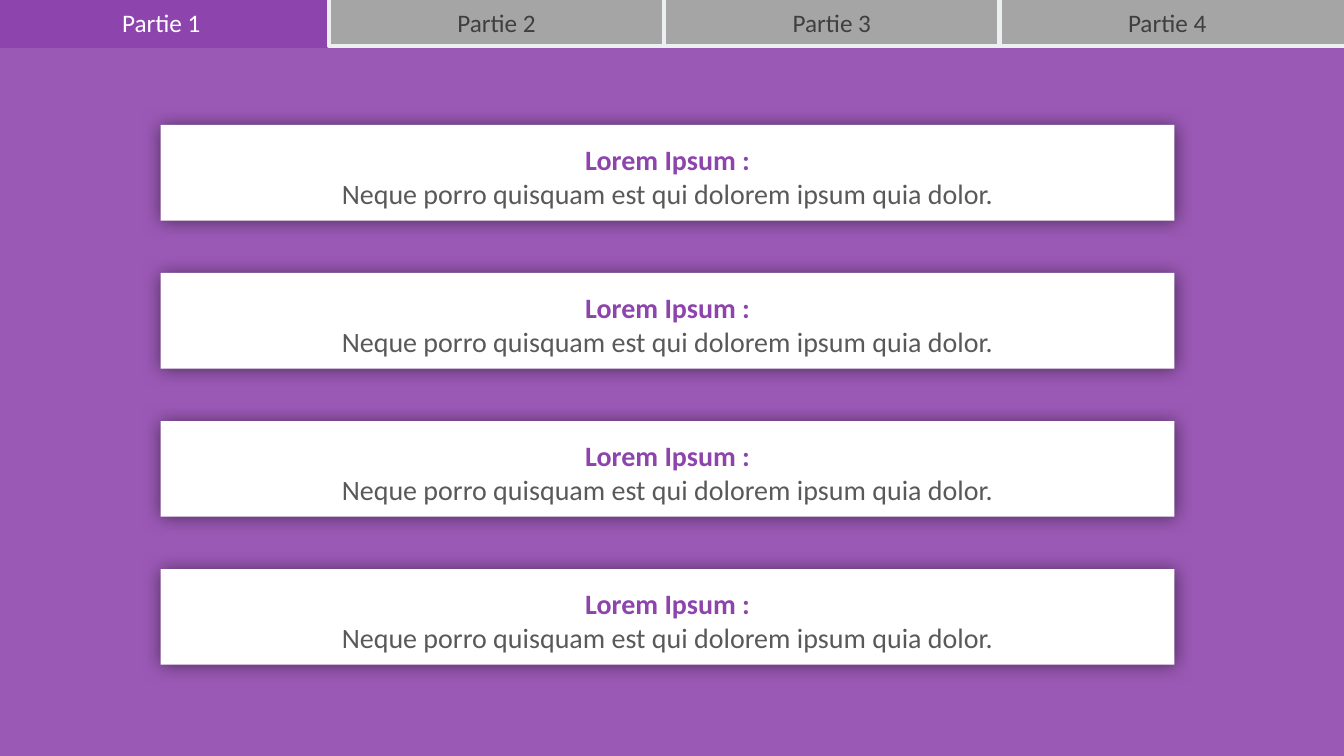
from lxml.etree import SubElement
from pptx import Presentation
from pptx.dml.color import RGBColor
from pptx.enum.shapes import MSO_SHAPE
from pptx.enum.text import MSO_ANCHOR, PP_ALIGN
from pptx.oxml.ns import qn
from pptx.util import Cm, Pt

FONT = "Calibri"
BACKGROUND = RGBColor(0x9B, 0x59, 0xB6)
PURPLE = RGBColor(0x8E, 0x44, 0xAD)
TAB_GREY = RGBColor(0xA5, 0xA5, 0xA5)
TAB_BORDER = RGBColor(0xEC, 0xF0, 0xF1)
TAB_TEXT = RGBColor(0x3F, 0x3F, 0x3F)
BODY_TEXT = RGBColor(0x59, 0x59, 0x59)
WHITE = RGBColor(0xFF, 0xFF, 0xFF)

PARTS = ["Partie 1", "Partie 2", "Partie 3", "Partie 4"]
CARDS = [("Lorem Ipsum :",
          "Neque porro quisquam est qui dolorem ipsum quia dolor.")] * 4


def style(paragraph, text, size, color, bold=False):
    paragraph.text = text
    paragraph.alignment = PP_ALIGN.CENTER
    font = paragraph.font
    font.name, font.size, font.bold = FONT, Pt(size), bold
    font.color.rgb = color


def add_glow_shadow(shape):
    """Soft black shadow spreading evenly around the shape."""
    shape.shadow.inherit = False
    effects = shape._element.spPr.find(qn("a:effectLst"))
    shadow = SubElement(effects, qn("a:outerShdw"), blurRad=str(Pt(13)),
                        dist="0", dir="0", algn="ctr", rotWithShape="0")
    black = SubElement(shadow, qn("a:srgbClr"), val="000000")
    SubElement(black, qn("a:alpha"), val="49000")


def add_card(slide, left, top, width, height, heading, body):
    card = slide.shapes.add_shape(MSO_SHAPE.RECTANGLE, left, top, width, height)
    card.fill.solid()
    card.fill.fore_color.rgb = WHITE
    card.line.fill.background()
    add_glow_shadow(card)

    frame = card.text_frame
    frame.word_wrap = True
    frame.vertical_anchor = MSO_ANCHOR.MIDDLE
    style(frame.paragraphs[0], heading, 20, PURPLE, bold=True)
    frame.paragraphs[0].line_spacing = 1.2
    style(frame.add_paragraph(), body, 20, BODY_TEXT)


def add_cards(slide, left, top, width, height):
    """Cards of equal height, spread evenly over the box."""
    card_height = Cm(2.41)
    pitch = (height - card_height) // (len(CARDS) - 1)
    for row, (heading, body) in enumerate(CARDS):
        add_card(slide, left, top + row * pitch, width, card_height, heading, body)


def add_tab_bar(slide, left, top, width, height, active=0):
    """Navigation tabs; the last one runs a little past the slide edge."""
    bar = slide.shapes.add_group_shape()
    overrun = Cm(0.36)
    pitch = (width - overrun) // len(PARTS)

    # Tab backgrounds
    for column in range(len(PARTS)):
        is_last = column == len(PARTS) - 1
        tab = bar.shapes.add_shape(
            MSO_SHAPE.RECTANGLE, left + column * pitch, top,
            pitch + (overrun if is_last else 0), height)
        tab.shadow.inherit = False
        tab.fill.solid()
        tab.fill.fore_color.rgb = PURPLE if column == active else TAB_GREY
        tab.line.color.rgb = PURPLE if column == active else TAB_BORDER
        tab.line.width = Pt(3)

    # Tab labels
    for column, part in enumerate(PARTS):
        label = bar.shapes.add_textbox(
            left + column * pitch, top + Cm(0.2), pitch, Cm(1.03))
        label.text_frame.word_wrap = True
        style(label.text_frame.paragraphs[0], part, 18,
              WHITE if column == active else TAB_TEXT)


def main():
    presentation = Presentation()
    presentation.slide_width = Cm(33.87)
    presentation.slide_height = Cm(19.05)
    slide = presentation.slides.add_slide(presentation.slide_layouts[6])
    slide.background.fill.solid()
    slide.background.fill.fore_color.rgb = BACKGROUND

    add_cards(slide, Cm(4.05), Cm(3.15), Cm(25.55), Cm(13.6))
    add_tab_bar(slide, Cm(-0.16), Cm(-0.13), Cm(34.16), Cm(1.29))
    presentation.save("out.pptx")


if __name__ == "__main__":
    main()
